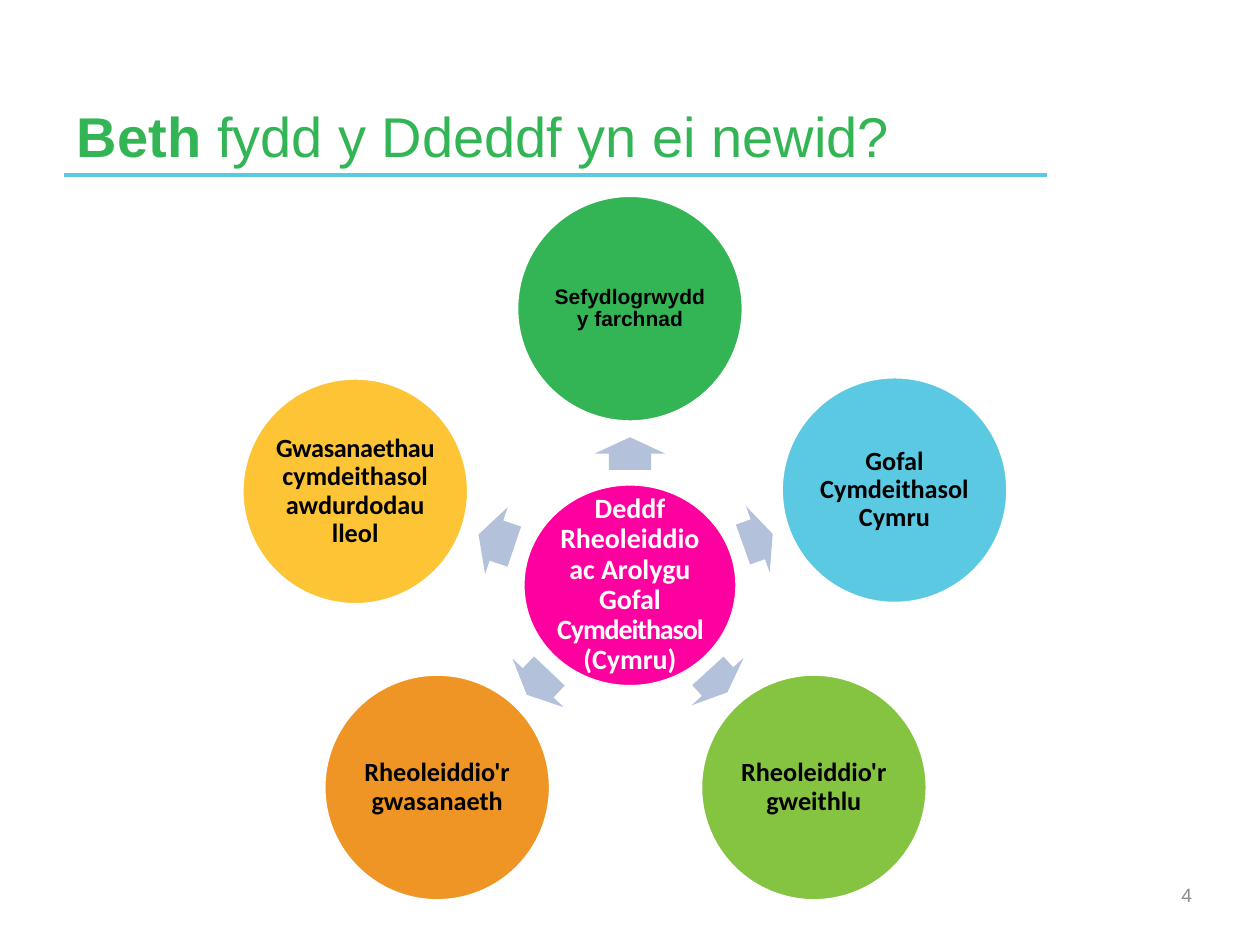
import pptx
import pptx.dml.color
import pptx.enum.shapes
import pptx.enum.text
import pptx.oxml
import pptx.util
from pptx.util import Inches

GREEN, CYAN, WHITE, BLACK = "34B555", "5CC9E3", "FFFFFF", "000000"
SATELLITE_SIZE = 1.8
ARROW_HEIGHT = 0.56

# label runs are (text, letter spacing in points)
SATELLITES = [
    dict(left=4.1, top=1.55, fill=GREEN, runs=[("Sefydlogrwydd y farchnad", 0)],
         size=12, font="Arial", side_inset=0),
    dict(left=5.56, top=5.35, fill="85C441", runs=[("Rheoleiddio'r\ngweithlu", 0)]),
    dict(left=2.57, top=5.35, fill="EF9526", runs=[("Rheoleiddio'r\ngwasanaeth", 0)]),
    dict(left=6.2, top=2.99, fill=CYAN, runs=[("Gofal Cymdeithasol\nCymru", 0)]),
    dict(left=1.92, top=3, fill="FDC536", side_inset=0,
         runs=[("Gwasanaethau ", -0.2), ("cymdeithasol awdurdodau lleol", 0)]),
]
HUB_RUNS = [("Deddf Rheoleiddio\nac Arolygu Gofal ", 0), ("Cymdeithasol ", -0.6), ("(Cymru)", 0)]
ARROWS = [
    (4.87, 3.32, 0.26, 270),
    (5.58, 5.13, 0.23, 47.6),
    (4.14, 5.14, 0.26, 133.6),
    (5.89, 4, 0.25, 340.3),
    (3.79, 4.01, 0.3, 198.7),
]


def color(value):
    """Return the RGB colour for a hex string."""
    return pptx.dml.color.RGBColor.from_string(value)


def add_text(paragraph, text, size, font="Calibri", fill=BLACK, bold=False, spacing=0):
    """Append formatted text to a paragraph, breaking lines at newlines."""
    for index, line in enumerate(text.split("\n")):
        if index:
            paragraph.add_line_break()
        run = paragraph.add_run()
        run.text = line
        run.font.size = pptx.util.Pt(size)
        run.font.name = font
        run.font.bold = bold
        run.font.color.rgb = color(fill)
        if spacing:
            run.font._element.set("spc", str(round(spacing * 100)))


def add_title(slide, left, top, width, height):
    """Place the title above its rule."""
    title = slide.shapes.title
    title.left, title.top = Inches(left), Inches(top)
    title.width, title.height = Inches(width), Inches(height)
    frame = title.text_frame
    frame.auto_size = pptx.enum.text.MSO_AUTO_SIZE.NONE
    frame.vertical_anchor = pptx.enum.text.MSO_ANCHOR.BOTTOM
    paragraph = frame.paragraphs[0]
    paragraph.alignment = pptx.enum.text.PP_ALIGN.LEFT
    add_text(paragraph, "Beth ", 32, "Arial", GREEN, bold=True)
    add_text(paragraph, "fydd y Ddeddf yn ei newid?", 32, "Arial", GREEN)

    bottom = Inches(top + height)
    rule = slide.shapes.add_connector(
        pptx.enum.shapes.MSO_CONNECTOR.STRAIGHT, Inches(left), bottom, Inches(left + width), bottom)
    rule.line.color.rgb = color(CYAN)
    rule.line.width = pptx.util.Pt(2)
    properties = rule._element.spPr
    properties.append(properties.makeelement(pptx.oxml.ns.qn("a:effectLst"), {}))


def add_circle(slide, left, top, width, height, fill, runs,
               size=15, font="Calibri", text_color=BLACK, side_inset=0.02):
    """Draw a filled circle with a centred bold label."""
    circle = slide.shapes.add_shape(
        pptx.enum.shapes.MSO_SHAPE.OVAL, Inches(left), Inches(top), Inches(width), Inches(height))
    circle.shadow.inherit = False
    circle.fill.solid()
    circle.fill.fore_color.rgb = color(fill)
    circle.line.color.rgb = color(WHITE)
    circle.line.width = pptx.util.Pt(2)
    frame = circle.text_frame
    frame.word_wrap = True
    frame.vertical_anchor = pptx.enum.text.MSO_ANCHOR.MIDDLE
    frame.margin_left = frame.margin_right = Inches(side_inset)
    frame.margin_top = frame.margin_bottom = Inches(0.02)
    paragraph = frame.paragraphs[0]
    paragraph.alignment = pptx.enum.text.PP_ALIGN.CENTER
    paragraph.line_spacing = 0.9
    for text, spacing in runs:
        add_text(paragraph, text, size, font, text_color, bold=True, spacing=spacing)


def add_arrow(slide, left, top, width, rotation):
    """Draw a block arrow leading outwards from the hub."""
    arrow = slide.shapes.add_shape(
        pptx.enum.shapes.MSO_SHAPE.RIGHT_ARROW,
        Inches(left), Inches(top), Inches(width), Inches(ARROW_HEIGHT))
    arrow.adjustments[0], arrow.adjustments[1] = 0.6, 0.5
    arrow.rotation = rotation
    arrow.shadow.inherit = False
    arrow.fill.solid()
    arrow.fill.fore_color.rgb = color("B3C1DB")
    arrow.line.fill.background()


def add_diagram(slide, left, top):
    """Draw the hub, its arrows and the circles around it."""
    add_circle(slide, left + 2.23, top + 2.29, 1.7, 1.61, "FF00A0", HUB_RUNS,
               size=16, text_color=WHITE)
    for (arrow_left, arrow_top, width, rotation), satellite in zip(ARROWS, SATELLITES):
        add_arrow(slide, left + arrow_left - 1.92, top + arrow_top - 1.55, width, rotation)
        place = dict(left=left + satellite["left"] - 1.92, top=top + satellite["top"] - 1.55)
        add_circle(slide, width=SATELLITE_SIZE, height=SATELLITE_SIZE, **{**satellite, **place})


def add_page_number(slide, left, top, width, height):
    """Write the page number at the right of its box."""
    box = slide.shapes.add_textbox(Inches(left), Inches(top), Inches(width), Inches(height))
    frame = box.text_frame
    frame.word_wrap = True
    frame.vertical_anchor = pptx.enum.text.MSO_ANCHOR.MIDDLE
    paragraph = frame.paragraphs[0]
    paragraph.alignment = pptx.enum.text.PP_ALIGN.RIGHT
    add_text(paragraph, "4", 11, "Arial", "8C8C8C")


def main():
    """Build and save the presentation."""
    presentation = pptx.Presentation()
    presentation.slide_width, presentation.slide_height = Inches(10), Inches(7.5)
    slide = presentation.slides.add_slide(presentation.slide_layouts[5])
    add_title(slide, 0.51, 0.31, 7.8, 1.08)
    add_page_number(slide, 7.23, 6.9, 2.33, 0.4)
    add_diagram(slide, 1.92, 1.55)
    presentation.save("out.pptx")


if __name__ == "__main__":
    main()
